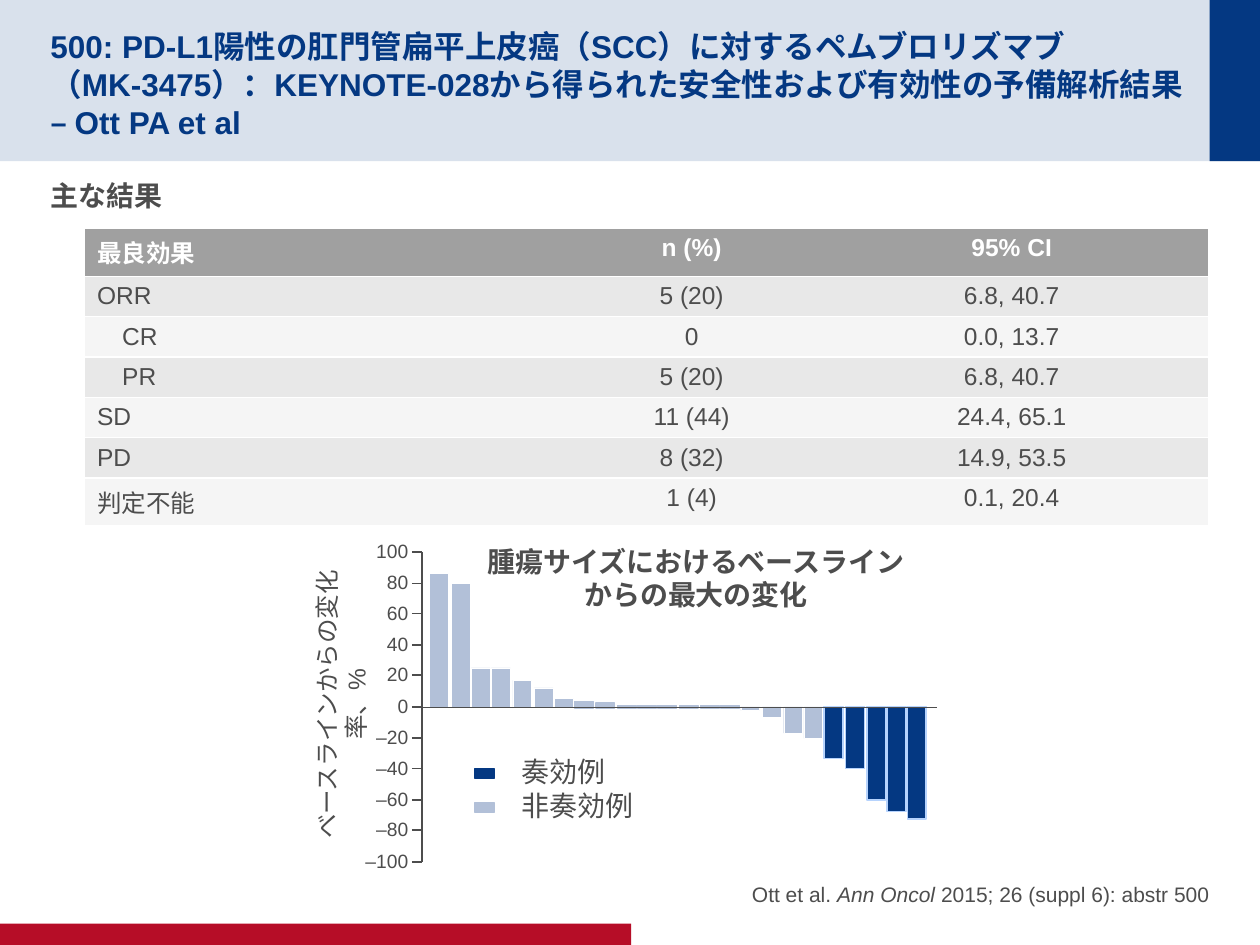
from dataclasses import dataclass

from lxml.etree import SubElement
from pptx import Presentation
from pptx.dml.color import RGBColor
from pptx.enum.shapes import MSO_CONNECTOR, MSO_SHAPE
from pptx.enum.text import MSO_ANCHOR, MSO_AUTO_SIZE as FIT, PP_ALIGN as ALIGN
from pptx.oxml import parse_xml
from pptx.oxml.ns import nsdecls, qn
from pptx.util import Pt

EMU_PER_PX = 9144  # 100 px to the inch
FONT = "Arial"
COLORS = {
    "navy": "043882", "red": "B60D27", "text": "4D4D4D", "white": "FFFFFF",
    "light": "B2C0D8", "edge": "B6D3FD",
    "head": "A0A0A0", "odd": "E8E8E8", "even": "F5F5F5",
}


@dataclass(frozen=True)
class Box:
    left: int
    top: int
    width: int
    height: int

    def emu(self) -> list[int]:
        return [px(v) for v in (self.left, self.top, self.width, self.height)]


@dataclass(frozen=True)
class BarGroup:
    heights: tuple[int, ...]  # px, negative below the zero line
    fill: str
    line: str
    line_pt: float


TABLE = [
    ("最良効果", "n (%)", "95% CI"),
    ("ORR", "5 (20)", "6.8, 40.7"),
    ("CR", "0", "0.0, 13.7"),
    ("PR", "5 (20)", "6.8, 40.7"),
    ("SD", "11 (44)", "24.4, 65.1"),
    ("PD", "8 (32)", "14.9, 53.5"),
    ("判定不能", "1 (4)", "0.1, 20.4"),
]
COLUMN_WIDTHS = (384, 196, 312)
ROW_HEIGHTS = (38, 32, 32, 32, 32, 32, 38)
INDENTED = ("CR", "PR")

BAR_GROUPS = [
    BarGroup((107, 99, 32, 32, 22, 16, 8), "light", "white", 0.25),
    BarGroup((5, 4, 2, 2, 2, 2, 2, 2), "light", "light", 0.75),
    BarGroup((-3, -8, -21, -25), "light", "white", 0.25),
    BarGroup((-41, -49, -74, -83, -89), "navy", "edge", 0.75),
]
BAR_LEFT, BAR_STEP, BAR_WIDTH = 341, 16.5, 15
AXIS_X, AXIS_TOP, AXIS_BOTTOM, ZERO_Y = 335, 438, 684, 561


def px(value: float) -> int:
    return round(value * EMU_PER_PX)


def rgb(name: str) -> RGBColor:
    return RGBColor.from_string(COLORS[name])


def style_runs(paragraph, size: float, color: str = "text", bold: bool = False) -> None:
    for run in paragraph.runs:
        run.font.name = FONT
        run.font.size = Pt(size)
        run.font.bold = bold
        run.font.color.rgb = rgb(color)


def add_rect(slide, box: Box, fill: str, line: str | None = None, line_pt: float = 0):
    rect = slide.shapes.add_shape(MSO_SHAPE.RECTANGLE, *box.emu())
    rect.shadow.inherit = False
    rect.fill.solid()
    rect.fill.fore_color.rgb = rgb(fill)
    if line:
        rect.line.color.rgb = rgb(line)
        rect.line.width = Pt(line_pt)
    else:
        rect.line.fill.background()
    return rect


def add_line(slide, x1: int, y1: int, x2: int, y2: int, width_pt: float = 1) -> None:
    line = slide.shapes.add_connector(
        MSO_CONNECTOR.STRAIGHT, px(x1), px(y1), px(x2), px(y2))
    line.line.color.rgb = rgb("text")
    line.line.width = Pt(width_pt)
    SubElement(line.element.spPr, qn("a:effectLst"))


def add_text(slide, box: Box, text: str, size: float, align=ALIGN.LEFT, bold: bool = False):
    label = slide.shapes.add_textbox(*box.emu())
    frame = label.text_frame
    frame.word_wrap = True
    frame.auto_size = FIT.SHAPE_TO_FIT_TEXT
    frame.text = text
    for paragraph in frame.paragraphs:
        paragraph.alignment = align
        style_runs(paragraph, size, bold=bold)
    return label


def place(holder, box: Box, anchor, inset_top: int = 0, inset_bottom: int = 0):
    """Move a placeholder, clear its bullet and return its paragraph."""
    holder.left, holder.top, holder.width, holder.height = box.emu()
    frame = holder.text_frame
    frame.auto_size = FIT.NONE
    frame.vertical_anchor = anchor
    frame.margin_left = frame.margin_right = 0
    frame.margin_top, frame.margin_bottom = px(inset_top), px(inset_bottom)
    paragraph = frame.paragraphs[0]
    paragraph.space_before = Pt(0)
    properties = paragraph._p.get_or_add_pPr()
    properties.set("marL", "0")
    properties.set("indent", "0")
    SubElement(properties, qn("a:buNone"))
    return paragraph


def set_borders(cell, is_first: bool, is_last: bool) -> None:
    """White rules above and below, and only at the outer sides."""
    visible = {"lnL": is_first, "lnR": is_last, "lnT": True, "lnB": True}
    white = f'<a:solidFill><a:srgbClr val="{COLORS["white"]}"/></a:solidFill>'
    for position, (side, shown) in enumerate(visible.items()):
        paint = white if shown else "<a:noFill/>"
        border = f'<a:{side} {nsdecls("a")} w="12700">{paint}</a:{side}>'
        cell._tc.get_or_add_tcPr().insert(position, parse_xml(border))


def add_frame(slide) -> None:
    """Header band, corner block and footer bar, behind the placeholders."""
    band = add_rect(slide, Box(0, 0, 1000, 128), "navy")
    SubElement(band.fill._xPr.find(f".//{qn('a:srgbClr')}"), qn("a:alpha"), val="15000")
    corner = add_rect(slide, Box(960, 0, 40, 128), "navy")
    footer = add_rect(slide, Box(0, 733, 501, 17), "red")
    for part in (band, corner, footer):
        slide.shapes.title.element.addprevious(part.element)


def add_headings(slide) -> None:
    title, results, citation = slide.placeholders
    heading = place(title, Box(40, 20, 901, 88), MSO_ANCHOR.MIDDLE, inset_top=5)
    heading.text = ("500: PD-L1陽性の肛門管扁平上皮癌（SCC）に対するペムブロリズマブ（MK-3475）："
                    "KEYNOTE-028から得られた安全性および有効性の予備解析結果 – Ott PA et al")
    heading.alignment = ALIGN.LEFT
    style_runs(heading, 18, "navy", bold=True)

    subtitle = place(results, Box(40, 137, 920, 519), MSO_ANCHOR.TOP, 5, 5)
    subtitle.text = "主な結果"
    style_runs(subtitle, 16, bold=True)

    source = place(citation, Box(508, 667, 452, 53), MSO_ANCHOR.BOTTOM)
    for part in ("Ott et al. ", "Ann Oncol", " 2015; 26 (suppl 6): abstr 500"):
        source.add_run().text = part
    source.alignment = ALIGN.RIGHT
    style_runs(source, 12)
    source.runs[1].font.italic = True


def add_response_table(slide) -> None:
    box = Box(67, 181, sum(COLUMN_WIDTHS), sum(ROW_HEIGHTS))
    table = slide.shapes.add_table(len(TABLE), len(COLUMN_WIDTHS), *box.emu()).table
    for column, width in zip(table.columns, COLUMN_WIDTHS):
        column.width = px(width)
    for r, (values, height) in enumerate(zip(TABLE, ROW_HEIGHTS)):
        table.rows[r].height = px(height)
        fill = "head" if r == 0 else "odd" if r % 2 else "even"
        for c, value in enumerate(values):
            cell = table.cell(r, c)
            cell.text = value
            cell.fill.solid()
            cell.fill.fore_color.rgb = rgb(fill)
            set_borders(cell, c == 0, c == len(values) - 1)
            paragraph = cell.text_frame.paragraphs[0]
            paragraph.alignment = ALIGN.CENTER if c else ALIGN.LEFT
            if value in INDENTED:
                paragraph._p.get_or_add_pPr().set("marL", str(px(20)))
            style_runs(paragraph, 14, "white" if r == 0 else "text", bold=r == 0)


def add_axis(slide) -> None:
    add_line(slide, AXIS_X, AXIS_TOP, AXIS_X, AXIS_BOTTOM)
    for value in range(100, -101, -20):
        y = round(ZERO_Y - value * (AXIS_BOTTOM - AXIS_TOP) / 200)
        add_line(slide, AXIS_X - 8, y, AXIS_X, y)
        width = 78 if value == -100 else 57
        add_text(slide, Box(334 - width, y - 15, width, 29),
                 str(value).replace("-", "–"), 11, ALIGN.RIGHT)
    axis_title = add_text(slide, Box(137, 542, 245, 34),
                          "ベースラインからの変化率、%", 14, ALIGN.CENTER)
    axis_title.rotation = 270


def add_waterfall(slide) -> None:
    add_text(slide, Box(376, 427, 353, 64),
             "腫瘍サイズにおけるベースラインからの最大の変化", 16, ALIGN.CENTER, bold=True)
    add_axis(slide)
    bars = [(group, height) for group in BAR_GROUPS for height in group.heights]
    for i, (group, height) in enumerate(bars):
        top = ZERO_Y + 1 - height if height > 0 else ZERO_Y
        box = Box(round(BAR_LEFT + i * BAR_STEP), top, BAR_WIDTH, abs(height))
        add_rect(slide, box, group.fill, group.line, group.line_pt)
    for top, color in ((610, "navy"), (637, "light")):
        add_rect(slide, Box(377, top, 15, 8), color, color, 0.75)
    add_text(slide, Box(404, 594, 353, 64), "奏効例\n非奏効例", 16)
    add_line(slide, 334, ZERO_Y, 744, ZERO_Y, 0.25)


def main() -> None:
    deck = Presentation()
    deck.slide_width, deck.slide_height = px(1000), px(750)
    slide = deck.slides.add_slide(deck.slide_layouts.get_by_name("Two Content"))
    add_frame(slide)
    add_headings(slide)
    add_response_table(slide)
    add_waterfall(slide)
    deck.save("out.pptx")


if __name__ == "__main__":
    main()
